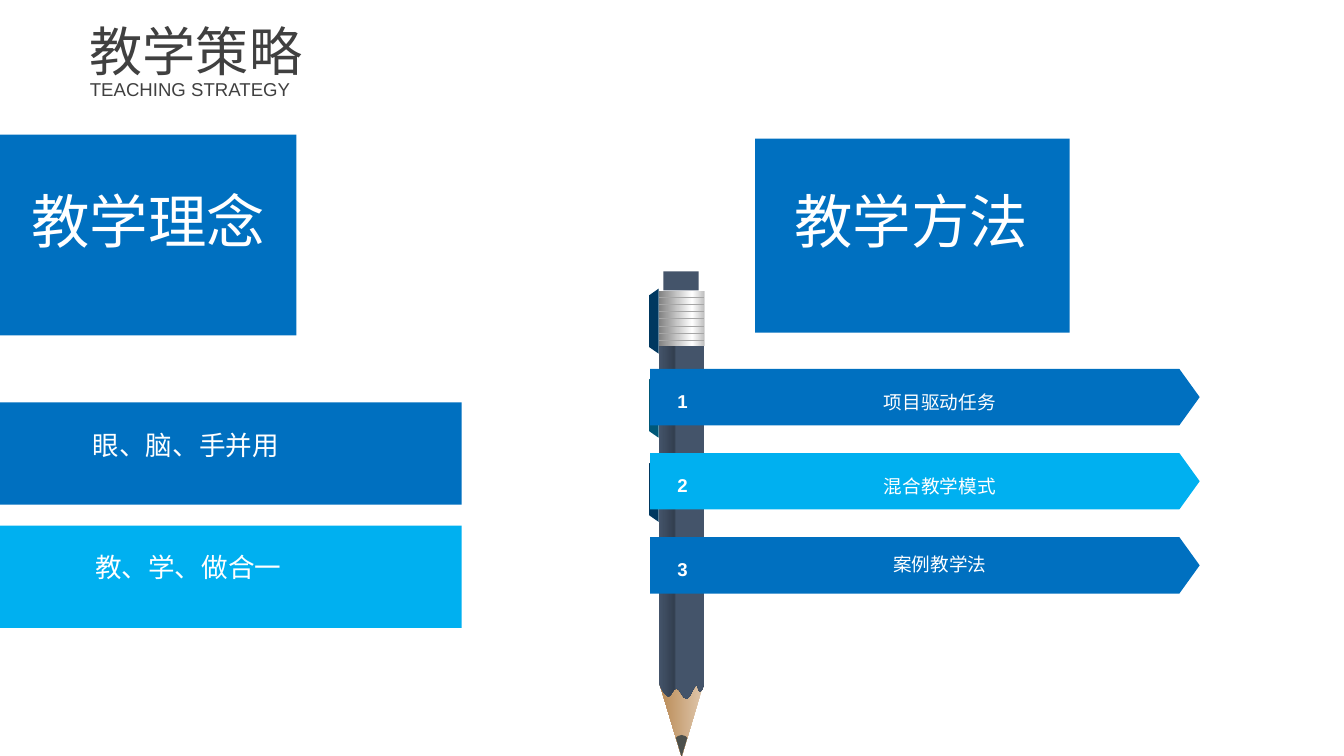
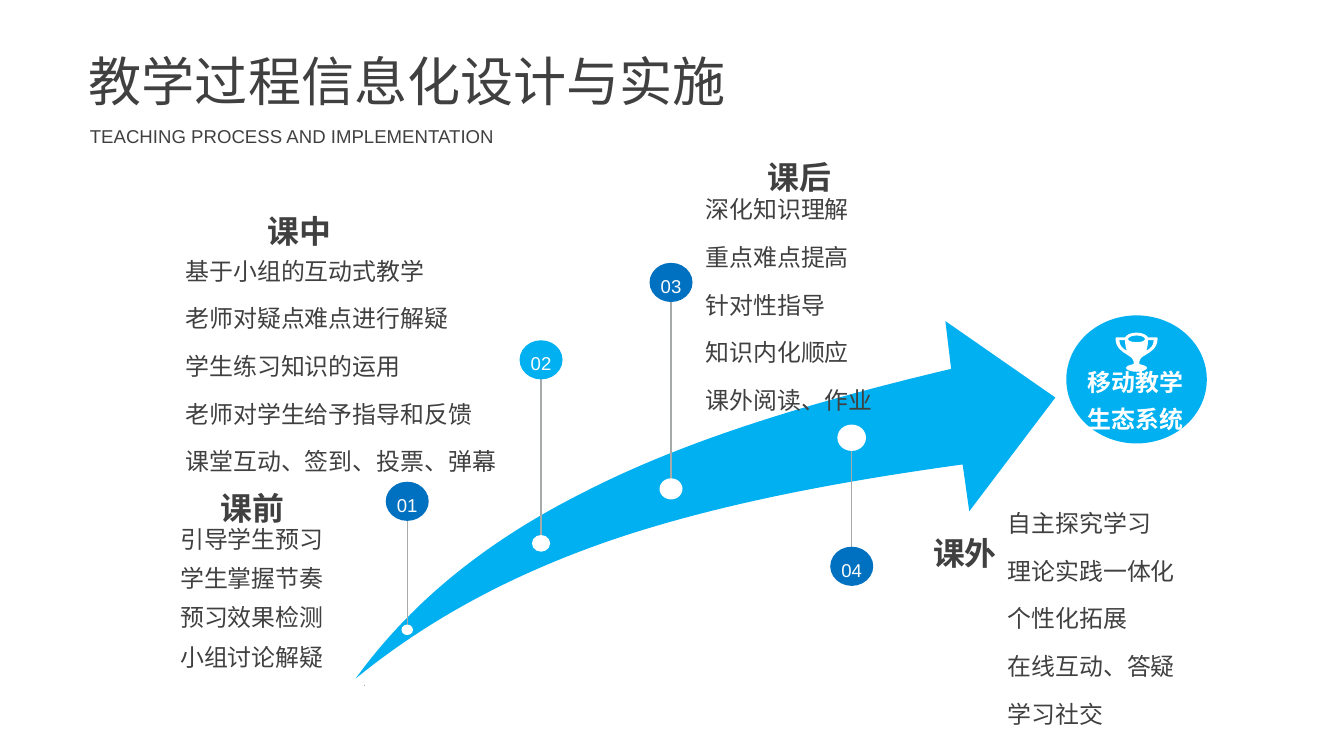
from lxml.etree import SubElement
from pptx import Presentation
from pptx.dml.color import RGBColor
from pptx.enum.shapes import MSO_CONNECTOR, MSO_SHAPE
from pptx.enum.text import MSO_ANCHOR, MSO_AUTO_SIZE, PP_ALIGN
from pptx.oxml.ns import qn
from pptx.util import Inches, Pt

# Shared style
FONT = "Arial"
BLUE, SKY, INK, WHITE = "0070C0", "00B0F0", "404040", "FFFFFF"
SLATE = "44546A"
LEFT, CENTER, RIGHT = PP_ALIGN.LEFT, PP_ALIGN.CENTER, PP_ALIGN.RIGHT
TOP, MIDDLE = MSO_ANCHOR.TOP, MSO_ANCHOR.MIDDLE

# Slide 1 content
STRATEGY_CARDS = [  # text, box, bottom inset, right inset, size, fill
    ("教学理念", (0, 1.41, 3.1, 2.1), 0.32, 0, 44, BLUE),
    ("教学方法", (7.9, 1.45, 3.29, 2.03), 0.32, 0.02, 44, BLUE),
    ("眼、脑、手并用", (0, 4.21, 4.83, 1.07), 0.19, 0.94, 20, BLUE),
    ("教、学、做合一", (-0.01, 5.5, 4.84, 1.07), 0.21, 0.88, 20, SKY),
]
METHODS = [  # text, top and bottom inset, bar fill, fold fill
    ("项目驱动任务", 0.05, 0, BLUE, "003860"),
    ("混合教学模式", 0.05, 0, SKY, "005878"),
    ("案例教学法", 0, 0.07, BLUE, "003860"),
]
METHOD_TOP, METHOD_PITCH = 3.86, 0.88

# Outlines: a pair is a corner, six numbers are a curve
PENCIL_BODY = [
    (6.89, 3.62), (7.37, 3.62), (7.37, 7.12),
    (7.36, 7.2, 7.34, 7.23, 7.32, 7.24), (7.29, 7.21, 7.31, 7.16, 7.28, 7.17),
    (7.26, 7.18, 7.22, 7.31, 7.18, 7.31), (7.15, 7.32, 7.11, 7.21, 7.08, 7.2),
    (7.04, 7.2, 7.02, 7.3, 6.99, 7.29), (6.94, 7.26, 6.91, 7.2, 6.89, 7.15),
]
PENCIL_LEAD = [
    (7.13, 7.69), (7.17, 7.7, 7.19, 7.71, 7.19, 7.72), (7.13, 7.92),
    (7.07, 7.72), (7.08, 7.71, 7.1, 7.69, 7.13, 7.69),
]
GROWTH_ARROW = [
    (3.72, 7.1), (4.3, 6.3, 5.09, 5.66, 6.11, 5.15),
    (7.14, 4.62, 8.43, 4.22, 9.95, 3.86), (9.89, 3.36), (11.04, 4.16),
    (10.14, 5.35), (10.07, 4.86), (8.69, 5.05, 7.47, 5.29, 6.43, 5.64),
    (5.37, 6, 4.48, 6.48, 3.72, 7.1),
]
TROPHY_LEFT_HOLE = [(11.71, 3.56), (11.77, 3.56),
                    (11.77, 3.61, 11.78, 3.65, 11.79, 3.67),
                    (11.75, 3.65, 11.71, 3.62, 11.71, 3.56)]
TROPHY_MOUTH = [(11.89, 3.51), (11.96, 3.51, 11.98, 3.54, 11.98, 3.55),
                (11.98, 3.56, 11.96, 3.58, 11.89, 3.58),
                (11.82, 3.58, 11.8, 3.56, 11.8, 3.55),
                (11.8, 3.54, 11.82, 3.51, 11.89, 3.51)]
TROPHY_RIGHT_HOLE = [(11.99, 3.67), (12, 3.65, 12.01, 3.61, 12.01, 3.56),
                     (12.07, 3.56), (12.07, 3.62, 12.03, 3.65, 11.99, 3.67)]
TROPHY_CUP = [
    (11.92, 3.78), (11.92, 3.75, 11.94, 3.74, 11.99, 3.71),
    (12.04, 3.68, 12.11, 3.64, 12.11, 3.54),
    (12.11, 3.53, 12.1, 3.53, 12.09, 3.53), (12.01, 3.53),
    (12, 3.51, 11.96, 3.48, 11.89, 3.48), (11.82, 3.48, 11.78, 3.51, 11.77, 3.53),
    (11.69, 3.53), (11.68, 3.53, 11.67, 3.53, 11.67, 3.54),
    (11.67, 3.64, 11.74, 3.68, 11.79, 3.71),
    (11.83, 3.74, 11.86, 3.75, 11.86, 3.78), (11.86, 3.81),
    (11.81, 3.82, 11.78, 3.83, 11.78, 3.85),
    (11.78, 3.87, 11.83, 3.89, 11.89, 3.89), (11.95, 3.89, 12, 3.87, 12, 3.85),
    (12, 3.83, 11.96, 3.82, 11.92, 3.81),
]

# Slide 2 content
STAGES = [  # heading, its box, list box, alignment, space before, lines
    ("课前", (1.8, 5.06, 1.68, 0.43), (1.44, 5.43, 2.39, 1.75), CENTER, 3.6,
     ["引导学生预习", "学生掌握节奏", "预习效果检测", "小组讨论解疑"]),
    ("课中", (2.27, 2.15, 1.72, 0.44), (1.94, 2.62, 3.59, 2.29), LEFT, 10,
     ["基于小组的互动式教学", "老师对疑点难点进行解疑", "学生练习知识的运用",
      "老师对学生给予指导和反馈", "课堂互动、签到、投票、弹幕"]),
    ("课后", (7.59, 1.59, 1.55, 0.43), (7.38, 1.98, 2.11, 2.29), LEFT, 10,
     ["深化知识理解", "重点难点提高", "针对性指导", "知识内化顺应",
      "课外阅读、作业"]),
    ("课外", (9.32, 5.53, 1.55, 0.43), (10.54, 5.26, 2.26, 2.35), LEFT, 10,
     ["自主探究学习", "理论实践一体化", "个性化拓展", "在线互动、答疑",
      "学习社交"]),
]
MILESTONES = [  # number, centre x, badge y, dot y, dot width, fill
    ("01", 4.26, 5.245, 6.59, 0.12, BLUE),
    ("02", 5.66, 3.765, 5.685, 0.19, SKY),
    ("03", 7.02, 2.955, 5.115, 0.24, BLUE),
    ("04", 8.91, 5.925, 4.58, 0.3, BLUE),
]


def rgb(code):
    return RGBColor.from_string(code)


def inches(values):
    return [Inches(value) for value in values]


def style(paragraph, size, color, bold=False, align=LEFT, spacing=1.0, before=0):
    paragraph.alignment = align
    paragraph.line_spacing = spacing
    paragraph.space_before = Pt(before)
    font = paragraph.font
    font.name, font.size, font.bold = FONT, Pt(size), bold
    font.color.rgb = rgb(color)


def write(holder, lines, size, color, anchor=MIDDLE, insets=(0, 0, 0, 0),
          wrap=True, **look):
    frame = holder.text_frame
    frame.auto_size = MSO_AUTO_SIZE.NONE
    frame.word_wrap = wrap
    frame.vertical_anchor = anchor
    (frame.margin_left, frame.margin_top,
     frame.margin_right, frame.margin_bottom) = inches(insets)
    frame.text = "\n".join(lines)
    for paragraph in frame.paragraphs:
        style(paragraph, size, color, **look)


def add_text(slide, box, text, size, color, **look):
    write(slide.shapes.add_textbox(*inches(box)), [text], size, color, **look)


def fill_placeholder(placeholder, box, lines, size, **look):
    (placeholder.left, placeholder.top,
     placeholder.width, placeholder.height) = inches(box)
    write(placeholder, lines, size, INK, **look)
    for paragraph in placeholder.text_frame.paragraphs:
        clear_bullet(paragraph)


def clear_bullet(paragraph):
    properties = paragraph._p.get_or_add_pPr()
    properties.set("marL", "0")
    properties.set("indent", "0")
    font_properties = properties.find(qn("a:defRPr"))
    font_properties.addprevious(SubElement(properties, qn("a:buNone")))


def paint(shape, fill):
    shape.shadow.inherit = False
    shape.line.fill.background()
    if isinstance(fill, str):
        shape.fill.solid()
        shape.fill.fore_color.rgb = rgb(fill)
        return
    # Gradient given as (angle, stops)
    angle, stops = fill
    shape.fill.gradient()
    shape.fill.gradient_angle = -angle % 360
    stop_list = next(shape.element.iter(qn("a:gsLst")))
    for old_stop in list(stop_list):
        stop_list.remove(old_stop)
    for position, color in stops:
        stop = SubElement(stop_list, qn("a:gs"), pos=str(position * 1000))
        SubElement(stop, qn("a:srgbClr"), val=color)


def add_shape(slide, kind, box, fill, rotation=0, adjust=None):
    shape = slide.shapes.add_shape(kind, *inches(box))
    paint(shape, fill)
    shape.rotation = rotation
    if adjust is not None:
        shape.adjustments[0] = adjust
    return shape


def add_oval(slide, x, y, width, height, fill):
    box = (x - width / 2, y - height / 2, width, height)
    return add_shape(slide, MSO_SHAPE.OVAL, box, fill)


def add_line(slide, start, end, color, width):
    line = slide.shapes.add_connector(
        MSO_CONNECTOR.STRAIGHT, *inches(start), *inches(end))
    line.line.color.rgb = rgb(color)
    line.line.width = Pt(width)
    SubElement(line.element.spPr, qn("a:effectLst"))


def add_outline(slide, fill, *outlines):
    builder = slide.shapes.build_freeform(*inches(outlines[0][0]))
    for outline in outlines:
        if outline is not outlines[0]:
            builder.move_to(*inches(outline[0]))
        nodes = [inches(piece[i:i + 2])
                 for piece in outline[1:] for i in range(0, len(piece), 2)]
        builder.add_line_segments(nodes, close=True)
    shape = builder.convert_to_shape()
    # Each curve's three nodes become one Bézier segment
    segments = iter(list(shape.element.iter(qn("a:lnTo"))))
    for piece in (piece for outline in outlines for piece in outline[1:]):
        segment = next(segments)
        if len(piece) == 6:
            segment.tag = qn("a:cubicBezTo")
            for extra in (next(segments), next(segments)):
                segment.append(extra[0])
                extra.getparent().remove(extra)
    paint(shape, fill)


def add_heading(slide, title, title_box, subtitle, subtitle_box):
    fill_placeholder(slide.shapes.title, title_box, [title], 40, anchor=MIDDLE)
    add_text(slide, subtitle_box, subtitle, 14, INK)


def draw_pencil(slide):
    tip = (90, [(0, "E1C9AF"), (100, "B88954")])
    wood = (0, [(0, SLATE), (34, "333F50"), (38, SLATE), (100, SLATE)])
    metal = (0, [(0, "808080"), (73, WHITE), (100, "BFBFBF")])
    add_shape(slide, MSO_SHAPE.PENTAGON, (6.73, 7.28, 0.8, 0.48), tip, 90, 1.67)
    add_outline(slide, wood, PENCIL_BODY)
    add_shape(slide, MSO_SHAPE.RECTANGLE, (6.89, 3.04, 0.48, 0.58), metal)
    add_shape(slide, MSO_SHAPE.RECTANGLE, (6.94, 2.84, 0.37, 0.2), SLATE)
    add_outline(slide, "4C504C", PENCIL_LEAD)
    for ring in range(7):
        y = 3.11 + 0.075 * ring
        add_line(slide, (6.89, y), (7.37, y), "A6A6A6", 0.5)


def build_strategy(deck):
    slide = deck.slides.add_slide(deck.slide_layouts[5])
    add_heading(slide, "教学策略", (0.94, 0.19, 4.32, 0.67),
                "TEACHING STRATEGY", (0.94, 0.81, 3.07, 0.24))
    for text, box, bottom, right, size, fill in STRATEGY_CARDS:
        card = add_shape(slide, MSO_SHAPE.RECTANGLE, box, fill)
        write(card, [text], size, WHITE, insets=(0, 0, right, bottom), align=CENTER)
    draw_pencil(slide)
    # Folds lie behind all the numbered method bars
    tops = [METHOD_TOP + METHOD_PITCH * row for row in range(len(METHODS))]
    for y, (*_, fold) in zip(tops, METHODS):
        add_shape(slide, MSO_SHAPE.TRAPEZOID, (6.5, y - 0.55, 0.68, 0.1),
                  fold, 270, 0.7)
    for number, (y, method) in enumerate(zip(tops, METHODS), 1):
        text, top, bottom, fill, _ = method
        bar = add_shape(slide, MSO_SHAPE.PENTAGON, (6.8, y, 5.75, 0.59),
                        fill, adjust=0.36)
        write(bar, [text], 14, WHITE, insets=(0.42, top, 0, bottom),
              align=CENTER, spacing=1.2)
        add_text(slide, (6.89, y + 0.14, 0.5, 0.34), str(number), 14, WHITE,
                 bold=True, align=CENTER, spacing=1.2)


def build_process(deck):
    slide = deck.slides.add_slide(deck.slide_layouts[4])
    add_heading(slide, "教学过程信息化设计与实施", (0.93, 0.51, 6.89, 0.67),
                "TEACHING PROCESS AND IMPLEMENTATION", (0.94, 1.3, 6.65, 0.24))
    # Arrow with its milestones
    add_outline(slide, SKY, GROWTH_ARROW)
    for number, x, badge_y, dot_y, dot_width, fill in MILESTONES:
        add_line(slide, (x, dot_y), (x, badge_y), "A6AAA9", 1)
        badge = add_oval(slide, x, badge_y, 0.45, 0.41, fill)
        write(badge, [number], 14, "FCFCFC", wrap=False, insets=(0, 0.03, 0, 0),
              align=CENTER, spacing=1.2)
        add_oval(slide, x, dot_y, dot_width, dot_width * 0.92, WHITE)
    # Goal at the arrow's end
    add_oval(slide, 11.89, 3.97, 1.47, 1.34, SKY)
    add_outline(slide, WHITE, TROPHY_LEFT_HOLE, TROPHY_MOUTH,
                TROPHY_RIGHT_HOLE, TROPHY_CUP)
    add_text(slide, (11.34, 3.95, 1.08, 0.39), "移动教学生态系统", 18, WHITE,
             bold=True, align=CENTER, spacing=1.3, before=10)
    # Stage headings and lists
    bodies = list(slide.placeholders)[1:]
    for body, (heading, heading_box, box, align, before, lines) in zip(bodies, STAGES):
        add_text(slide, heading_box, heading, 24, INK, bold=True,
                 align=CENTER, spacing=1.2, before=before)
        fill_placeholder(body, box, lines, 18, anchor=TOP, align=align,
                         spacing=1.2, before=before)
    # Closing mark of the first list
    mark = bodies[0].text_frame.add_paragraph()
    mark.text = "."
    style(mark, 8, "A6A6A6", align=RIGHT, spacing=1.2, before=1.6)
    clear_bullet(mark)
    # Lists lie above the arrow
    for body in bodies:
        slide.shapes.element.append(body.element)


def main():
    deck = Presentation()
    deck.slide_width, deck.slide_height = inches((14.06, 7.91))
    build_strategy(deck)
    build_process(deck)
    deck.save("out.pptx")


if __name__ == "__main__":
    main()
